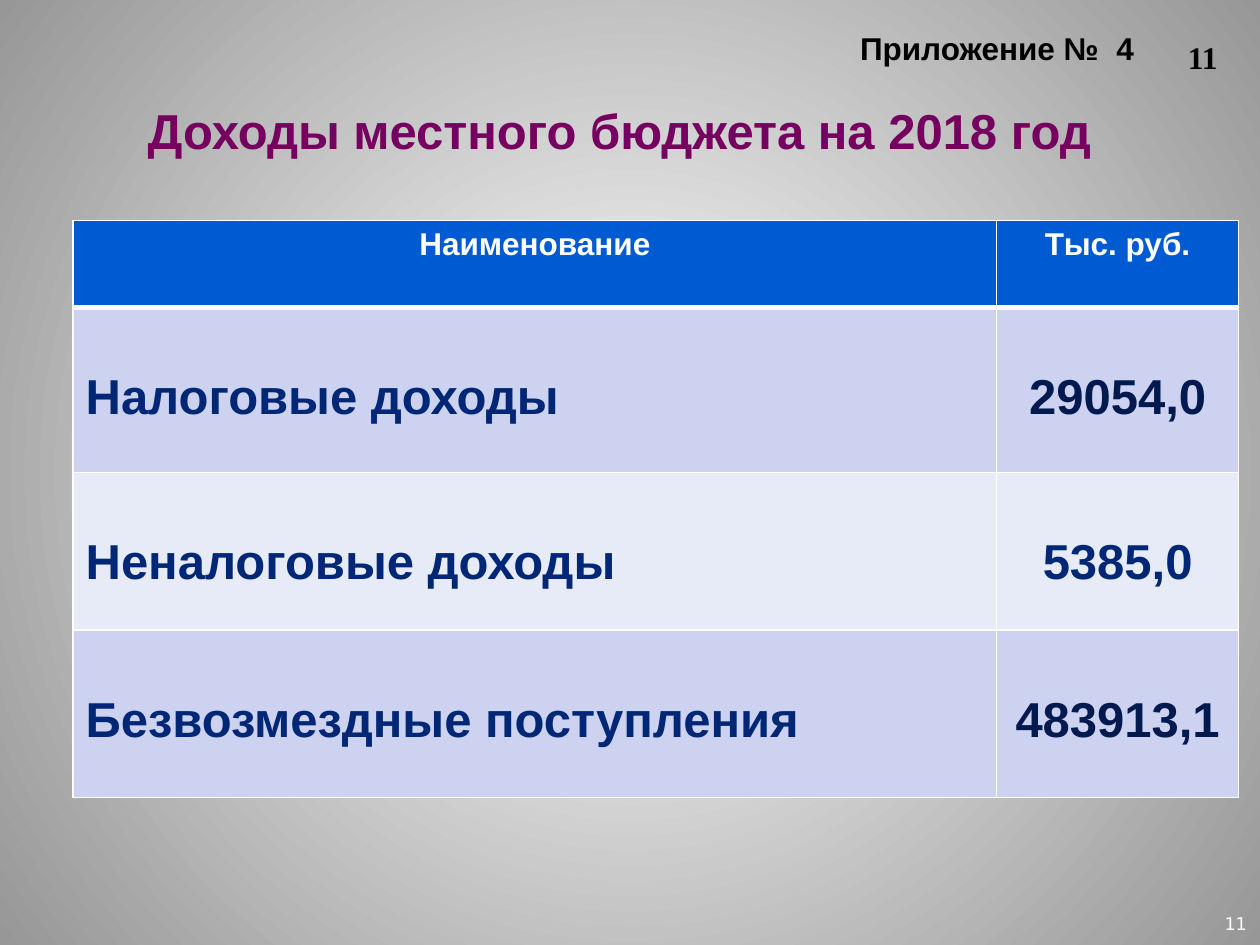
import lxml.etree
import pptx
import pptx.dml.color
import pptx.enum.text
import pptx.oxml.ns
import pptx.util

COLORS = {
    "center": "FFFFFF", "edge": "979797", "black": "000000",
    "white": "FFFFFF", "heading": "75005F", "header": "005BD3",
    "band": "CCD2EF", "light_band": "E7EAF7",
    "label": "002776", "dark": "001A4F",
}
ALIGN = pptx.enum.text.PP_ALIGN
ANCHOR = pptx.enum.text.MSO_ANCHOR
Inches = pptx.util.Inches
qn = pptx.oxml.ns.qn

HEADINGS = ("Наименование", "Тыс. руб.")
# Income name, amount, amount colour
INCOME = (
    ("Налоговые доходы", "29054,0", "dark"),
    ("Неналоговые доходы", "5385,0", "label"),
    ("Безвозмездные поступления", "483913,1", "dark"),
)
COLUMN_WIDTHS = (7.33, 1.92)
ROW_HEIGHTS = (0.69, 1.31, 1.25, 1.33)


def rgb(name):
    return pptx.dml.color.RGBColor.from_string(COLORS[name])


def write(frame, text, size, color, align=ALIGN.LEFT, font="Arial", bold=True):
    paragraph = frame.paragraphs[0]
    paragraph.alignment = align
    run = paragraph.add_run()
    run.text = text
    run.font.size = pptx.util.Pt(size)
    run.font.name = font
    run.font.bold = bold
    run.font.color.rgb = rgb(color)


def set_insets(frame, left, top):
    frame.margin_left = frame.margin_right = Inches(left)
    frame.margin_top = frame.margin_bottom = Inches(top)


def paint_background(slide):
    fill = slide.background.fill
    fill.gradient()
    for stop, position, color in zip(fill.gradient_stops, (0, 1), ("center", "edge")):
        stop.position = position
        stop.color.rgb = rgb(color)
    # Radial shade from the middle of the slide
    gradient = next(slide.element.iter(qn("a:gradFill")))
    for linear in gradient.findall(qn("a:lin")):
        gradient.remove(linear)
    circle = lxml.etree.Element(qn("a:path"), path="circle")
    lxml.etree.SubElement(circle, qn("a:fillToRect"),
                          {side: "50000" for side in "ltrb"})
    gradient.find(qn("a:gsLst")).addnext(circle)


def place_title(slide, box):
    title = slide.shapes.title
    title.left, title.top, title.width, title.height = map(Inches, box)
    frame = title.text_frame
    set_insets(frame, 0, 0)
    frame.vertical_anchor = ANCHOR.TOP
    frame.auto_size = pptx.enum.text.MSO_AUTO_SIZE.NONE
    write(frame, "Приложение №  4", 18, "black", ALIGN.RIGHT)


def add_text(slide, box, text, size, color, insets=(0.1, 0.05), **style):
    frame = slide.shapes.add_textbox(*map(Inches, box)).text_frame
    frame.word_wrap = True
    set_insets(frame, *insets)
    write(frame, text, size, color, **style)


def add_borders(cell, bottom):
    properties = cell._tc.get_or_add_tcPr()
    widths = {"a:lnL": 1, "a:lnR": 1, "a:lnT": 1, "a:lnB": bottom}
    for index, (edge, points) in enumerate(widths.items()):
        line = lxml.etree.Element(qn(edge), w=str(pptx.util.Pt(points)))
        solid = lxml.etree.SubElement(line, qn("a:solidFill"))
        lxml.etree.SubElement(solid, qn("a:srgbClr"), val=COLORS["white"])
        properties.insert(index, line)


def fill_cell(cell, text, size, color, fill, align, top=0.05, bottom=1):
    cell.fill.solid()
    cell.fill.fore_color.rgb = rgb(fill)
    cell.margin_top = Inches(top)
    cell.vertical_anchor = ANCHOR.TOP
    write(cell.text_frame, text, size, color, align)
    add_borders(cell, bottom)


def add_income_table(slide, box):
    left, top, width, height = box
    table = slide.shapes.add_table(
        len(ROW_HEIGHTS), len(COLUMN_WIDTHS), *map(Inches, box)).table
    for column, share in zip(table.columns, COLUMN_WIDTHS):
        column.width = Inches(width * share / sum(COLUMN_WIDTHS))
    for row, share in zip(table.rows, ROW_HEIGHTS):
        row.height = Inches(height * share / sum(ROW_HEIGHTS))

    # Header row
    for column, heading in enumerate(HEADINGS):
        fill_cell(table.cell(0, column), heading, 18, "white", "header",
                  ALIGN.CENTER, bottom=3)

    # Income rows, in alternating bands
    for row, (name, amount, amount_color) in enumerate(INCOME, start=1):
        band = "band" if row % 2 else "light_band"
        fill_cell(table.cell(row, 0), name, 28, "label", band, ALIGN.LEFT, top=0.5)
        fill_cell(table.cell(row, 1), amount, 28, amount_color, band,
                  ALIGN.CENTER, top=0.5)


def main():
    deck = pptx.Presentation()
    deck.slide_width, deck.slide_height = Inches(10), Inches(7.5)
    slide = deck.slides.add_slide(deck.slide_layouts[5])
    paint_background(slide)
    place_title(slide, (0.96, 0.23, 8.04, 0.3))
    # Footer page number
    add_text(slide, (9.72, 7.25, 0.23, 0.17), "11", 10, "white", insets=(0, 0),
             font="DejaVu Sans", bold=False)
    # Heading and upper page number
    add_text(slide, (0.75, 0.75, 8.33, 0.57), "Доходы местного бюджета на 2018 год",
             28, "heading", align=ALIGN.CENTER)
    add_text(slide, (9.33, 0.25, 0.5, 0.42), "11", 18, "black",
             font="Times New Roman")
    add_income_table(slide, (0.58, 1.75, 9.25, 4.58))
    deck.save("out.pptx")


if __name__ == "__main__":
    main()
